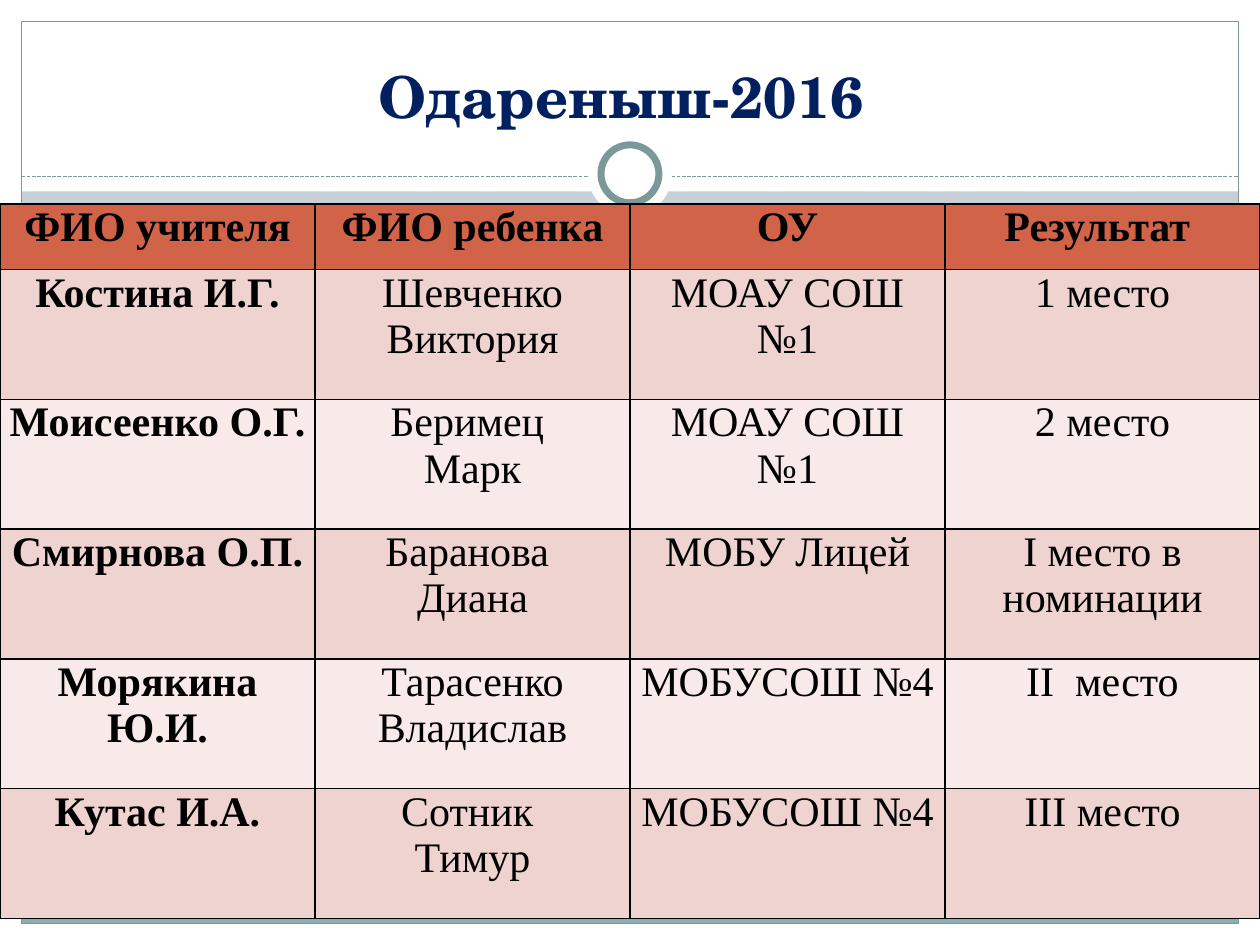
from lxml.etree import SubElement
from pptx import Presentation
from pptx.dml.color import RGBColor
from pptx.enum.dml import MSO_LINE
from pptx.enum.shapes import MSO_CONNECTOR, MSO_SHAPE
from pptx.enum.text import MSO_ANCHOR, PP_ALIGN
from pptx.oxml.ns import qn
from pptx.util import Inches, Pt

COLORS = {
    "back": "C5D1D7", "white": "FFFFFF", "band": "8CADAE", "frame": "7C999A",
    "title": "002060", "text": "000000", "header": "D16349",
    "odd": "EED3D0", "even": "F7EAE9",
}
HEADER = ["ФИО учителя", "ФИО ребенка", "ОУ", "Результат "]
RESULTS = [
    ["Костина И.Г.", "Шевченко Виктория", "МОАУ СОШ №1", "1 место"],
    ["Моисеенко О.Г.", "Беримец \nМарк", "МОАУ СОШ №1", "2 место"],
    ["Смирнова О.П.", "Баранова \nДиана", "МОБУ Лицей", "I место в номинации"],
    ["Морякина Ю.И.", "Тарасенко Владислав", "МОБУСОШ №4", "II  место"],
    ["Кутас И.А.", "Сотник \nТимур", "МОБУСОШ №4", "III место"],
]


def rgb(name):
    return RGBColor.from_string(COLORS[name])


def write(tf, text, size=24, font="Times New Roman", color="text", bold=False):
    tf.word_wrap = True
    for i, line in enumerate(text.split("\n")):
        p = tf.add_paragraph() if i else tf.paragraphs[0]
        p.alignment = PP_ALIGN.CENTER
        r = p.add_run()
        r.text = line
        r.font.size, r.font.name, r.font.bold = Pt(size), font, bold
        r.font.color.rgb = rgb(color)


class Deck:
    """Holds the style and the current slide, and draws each kind of element."""

    def __init__(self, prs):
        self.s = prs.slides.add_slide(prs.slide_layouts[6])
        fill = self.s.background.fill
        fill.solid()
        fill.fore_color.rgb = rgb("back")

    def shape(self, x, y, w, h, fill=None, line=None, width=0.75, kind=MSO_SHAPE.RECTANGLE):
        sp = self.s.shapes.add_shape(kind, Inches(x), Inches(y), Inches(w), Inches(h))
        sp.shadow.inherit = False
        if fill:
            sp.fill.solid()
            sp.fill.fore_color.rgb = rgb(fill)
        else:
            sp.fill.background()
        if line:
            sp.line.color.rgb = rgb(line)
            sp.line.width = Pt(width)
        else:
            sp.line.fill.background()

    def circle(self, cx, cy, d, **style):
        self.shape(cx - d / 2, cy - d / 2, d, d, kind=MSO_SHAPE.OVAL, **style)

    def dashed_line(self, x1, x2, y):
        c = self.s.shapes.add_connector(
            MSO_CONNECTOR.STRAIGHT, Inches(x1), Inches(y), Inches(x2), Inches(y))
        c.line.color.rgb = rgb("frame")
        c.line.width = Pt(0.75)
        c.line.dash_style = MSO_LINE.SQUARE_DOT
        SubElement(c._element.spPr, qn("a:effectLst"))

    def title(self, text, x, y, w, h):
        tf = self.s.shapes.add_textbox(Inches(x), Inches(y), Inches(w), Inches(h)).text_frame
        tf.vertical_anchor = MSO_ANCHOR.BOTTOM
        write(tf, text, size=33, font="TeX Gyre Schola", color="title", bold=True)

    def table(self, rows, x, y, w, heights):
        tbl = self.s.shapes.add_table(
            len(rows), len(rows[0]), Inches(x), Inches(y), Inches(w), Inches(sum(heights))).table
        for i, row in enumerate(rows):
            tbl.rows[i].height = Inches(heights[i])
            fill = "header" if i == 0 else "odd" if i % 2 else "even"
            for j, text in enumerate(row):
                self.cell(tbl.cell(i, j), text, fill, bold=i == 0 or j == 0)

    def cell(self, cell, text, fill, bold):
        cell.margin_left = cell.margin_right = Inches(0.07)
        cell.margin_top = cell.margin_bottom = 0
        write(cell.text_frame, text, bold=bold)
        pr = cell._tc.get_or_add_tcPr()
        for side in ("lnL", "lnR", "lnT", "lnB"):
            ln = SubElement(pr, qn("a:" + side), w=str(Pt(1)))
            SubElement(SubElement(ln, qn("a:solidFill")), qn("a:srgbClr"), val=COLORS["text"])
        cell.fill.solid()
        cell.fill.fore_color.rgb = rgb(fill)


def main():
    prs = Presentation()
    prs.slide_width, prs.slide_height = Inches(10), Inches(7.5)
    deck = Deck(prs)
    margins = [(0, 7.33, 10, 0.17), (0, 0, 10, 1.52), (0, 0, 0.17, 7.5), (9.83, 0, 0.17, 7.5)]
    for box in margins:
        deck.shape(*box, fill="white")
    deck.shape(0.17, 6.99, 9.66, 0.34, fill="band")
    deck.shape(0.17, 0.17, 9.66, 7.16, line="frame")
    deck.dashed_line(0.17, 9.83, 1.4)
    deck.circle(5, 1.38, 0.67, fill="white")
    deck.circle(5, 1.38, 0.46, fill="white", line="frame", width=4)
    deck.title("Одареныш-2016 ", 0.33, 0.25, 9.33, 0.83)
    deck.table([HEADER] + RESULTS, 0, 1.62, 10, [0.52] + [1.03] * len(RESULTS))
    prs.save("out.pptx")


if __name__ == "__main__":
    main()
